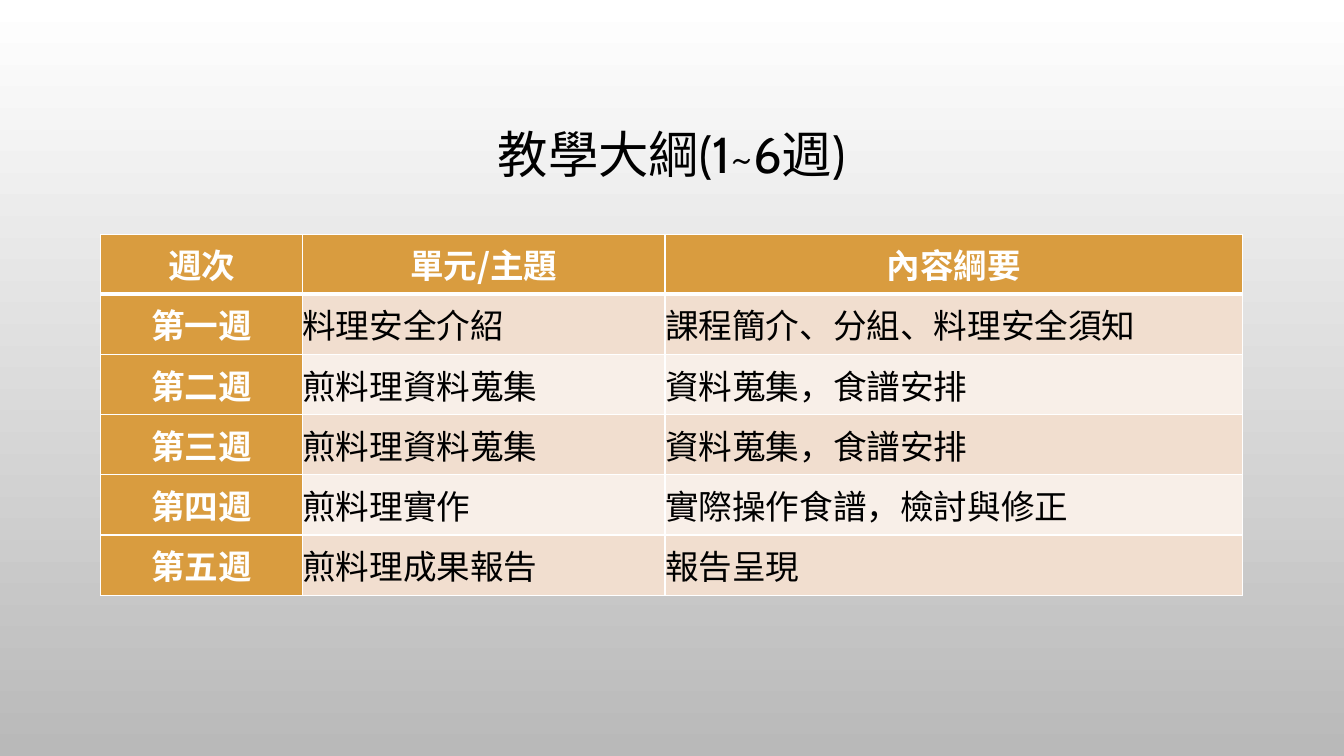
from dataclasses import dataclass

from lxml import etree
from pptx import Presentation, util as u
from pptx.dml.color import RGBColor
from pptx.enum import text
from pptx.oxml import ns


@dataclass(frozen=True)
class Theme:
    """Colours, fonts and type sizes of the deck."""
    white: str = "FFFFFF"
    black: str = "000000"
    page_end: str = "B9B9B9"
    accent: str = "D99C3F"
    bands: tuple = ("F1DECF", "F8EFE8")
    title_font: str = "Cabin"
    table_font: str = "Noto Sans CJK SC"
    title_size: int = 36
    table_size: int = 24
    thin: int = 1
    thick: int = 3


THEME = Theme()
TITLE = "教學大綱(1~6週)"
COLUMN_WIDTHS = (5.08, 9.14, 14.55)
SYLLABUS = (
    ("週次", "單元/主題", "內容綱要"),
    ("第一週", "料理安全介紹", "課程簡介、分組、料理安全須知"),
    ("第二週", "煎料理資料蒐集", "資料蒐集，食譜安排"),
    ("第三週", "煎料理資料蒐集", "資料蒐集，食譜安排"),
    ("第四週", "煎料理實作", "實際操作食譜，檢討與修正"),
    ("第五週", "煎料理成果報告", "報告呈現"),
)


def style_paragraph(para, font, size, color, bold, align):
    """Format a paragraph and its runs, East Asian glyphs included."""
    para.alignment = align
    for span in para.runs:
        span.font.name = font
        span.font.size = u.Pt(size)
        span.font.bold = bold
        span.font.color.rgb = RGBColor.from_string(color)
        east_asian = etree.SubElement(span.font._element, ns.qn("a:ea"))
        east_asian.set("typeface", THEME.table_font)


def set_borders(cell, top, bottom):
    """Draw white borders around a cell."""
    properties = cell._tc.get_or_add_tcPr()
    widths = {"lnL": THEME.thin, "lnR": THEME.thin, "lnT": top, "lnB": bottom}
    for position, (side, width) in enumerate(widths.items()):
        line = etree.Element(ns.qn(f"a:{side}"), w=str(u.Pt(width)))
        fill = etree.SubElement(line, ns.qn("a:solidFill"))
        etree.SubElement(fill, ns.qn("a:srgbClr"), val=THEME.white)
        properties.insert(position, line)


def paint_background(page):
    """Fill the page with a gradient running downwards."""
    fill = page.background.fill
    fill.gradient()
    fill.gradient_angle = 270
    for stop, color in zip(fill.gradient_stops, (THEME.white, THEME.page_end)):
        stop.color.rgb = RGBColor.from_string(color)


def add_title(page, left, top, width, height):
    """Place the centred title in the given box."""
    box = page.shapes.add_textbox(left, top, width, height)
    frame = box.text_frame
    frame.word_wrap = True
    frame.vertical_anchor = text.MSO_ANCHOR.MIDDLE
    frame.text = TITLE
    para = frame.paragraphs[0]
    para.line_spacing = 0.9
    style_paragraph(para, THEME.title_font, THEME.title_size, THEME.black,
                    False, text.PP_ALIGN.CENTER)


def fill_cell(cell, words, row, column):
    """Write one cell, styled by its place in the table."""
    heading = row == 0 or column == 0
    cell.text = words
    cell.vertical_anchor = text.MSO_ANCHOR.MIDDLE
    cell.margin_left = cell.margin_right = 0
    cell.margin_top = cell.margin_bottom = 0
    cell.fill.solid()
    color = THEME.accent if heading else THEME.bands[(row - 1) % 2]
    cell.fill.fore_color.rgb = RGBColor.from_string(color)
    set_borders(cell, THEME.thick if row == 1 else THEME.thin,
                THEME.thick if row == 0 else THEME.thin)
    style_paragraph(cell.text_frame.paragraphs[0], THEME.table_font,
                    THEME.table_size,
                    THEME.white if heading else THEME.black, heading,
                    text.PP_ALIGN.CENTER if heading else text.PP_ALIGN.LEFT)


def add_syllabus(page, left, top, width, height):
    """Place the weekly table in the given box."""
    table = page.shapes.add_table(len(SYLLABUS), len(COLUMN_WIDTHS),
                                  left, top, width, height).table
    for column, share in zip(table.columns, COLUMN_WIDTHS):
        column.width = round(width * share / sum(COLUMN_WIDTHS))
    for row, entries in enumerate(SYLLABUS):
        for column, words in enumerate(entries):
            fill_cell(table.cell(row, column), words, row, column)


def main():
    """Build and save the deck."""
    deck = Presentation()
    deck.slide_width, deck.slide_height = u.Cm(33.87), u.Cm(19.05)
    page = deck.slides.add_slide(deck.slide_layouts[6])
    left, width = u.Cm(2.54), u.Cm(28.77)
    paint_background(page)
    add_title(page, left, u.Cm(1.73), width, u.Cm(4.44))
    add_syllabus(page, left, u.Cm(5.9), width, u.Cm(9.1))
    deck.save("out.pptx")


if __name__ == "__main__":
    main()
